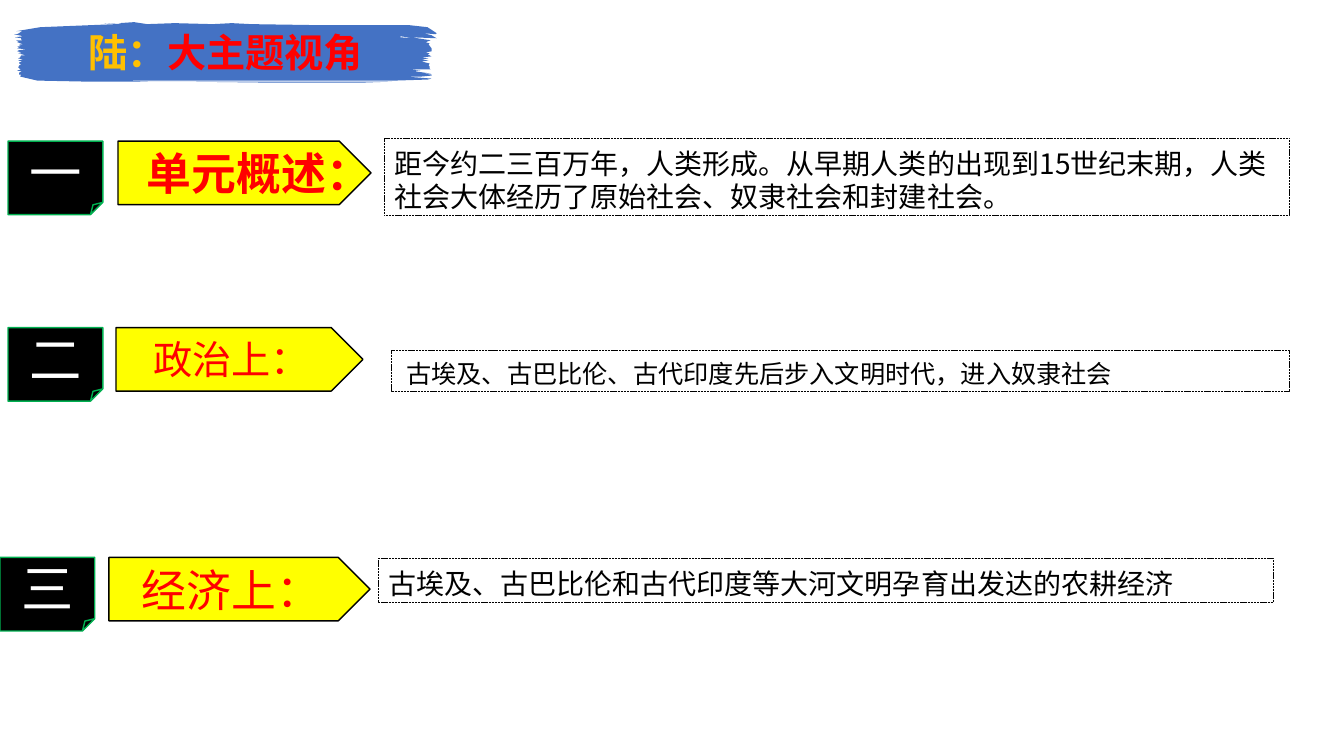
from lxml.etree import SubElement
from pptx import Presentation
from pptx.dml.color import RGBColor
from pptx.enum.dml import MSO_LINE
from pptx.enum.shapes import MSO_SHAPE
from pptx.enum.text import MSO_ANCHOR, MSO_AUTO_SIZE, PP_ALIGN
from pptx.oxml.ns import qn
from pptx.util import Pt

PX = 9144
FONT = "Noto Sans CJK SC"
BLACK = RGBColor(0x00, 0x00, 0x00)
WHITE = RGBColor(0xFF, 0xFF, 0xFF)
RED = RGBColor(0xFF, 0x00, 0x00)
GOLD = RGBColor(0xFF, 0xC0, 0x00)
YELLOW = RGBColor(0xFF, 0xFF, 0x00)
GREEN = RGBColor(0x00, 0xB0, 0x50)
BLUE = RGBColor(0x44, 0x72, 0xC4)

BRUSH = [
    (15, 37), (21, 38), (21, 39), (22, 40), (16, 40), (19, 42), (17, 42),
    (23, 44), (19, 44), (21, 45), (19, 45), (20, 46), (17, 46), (19, 47),
    (17, 48), (26, 49), (18, 50), (17, 51), (23, 52), (19, 52), (22, 53),
    (18, 53), (26, 55), (21, 55), (20, 57), (18, 58), (23, 59), (18, 60),
    (22, 61), (19, 62), (19, 63), (21, 64), (19, 65), (18, 67), (21, 68),
    (19, 68), (21, 69), (17, 70), (22, 71), (19, 72), (19, 74), (21, 74),
    (20, 76), (37, 80), (85, 81), (182, 81), (266, 82), (359, 82),
    (389, 81), (251, 81), (149, 81), (120, 80), (187, 80), (230, 80),
    (324, 80), (391, 80), (424, 79), (428, 78), (402, 76), (418, 76),
    (428, 75), (428, 74), (417, 73), (427, 73), (413, 71), (412, 70),
    (417, 70), (407, 69), (427, 69), (426, 68), (426, 66), (425, 65),
    (426, 63), (418, 61), (425, 60), (418, 59), (425, 58), (418, 57),
    (428, 56), (424, 54), (426, 53), (422, 52), (428, 51), (428, 48),
    (425, 44), (426, 43), (422, 42), (427, 40), (408, 37), (433, 38),
    (428, 35), (420, 33), (432, 34), (433, 33), (430, 31), (424, 27),
    (406, 25), (317, 25), (249, 24), (230, 23), (211, 24), (173, 23),
    (146, 24), (133, 22), (118, 23), (121, 24), (103, 23), (115, 24),
    (40, 27), (16, 31), (22, 31), (17, 34), (14, 34), (23, 36),
]
NICK = [(397, 37), (397, 36), (404, 37), (408, 38)]


def write(frame, runs, size, bold=False, align=PP_ALIGN.CENTER):
    """Fill the first paragraph with coloured runs and return it."""
    frame.word_wrap = True
    frame.auto_size = MSO_AUTO_SIZE.NONE
    frame.vertical_anchor = MSO_ANCHOR.MIDDLE
    para = frame.paragraphs[0]
    para.alignment = align
    for text, color in runs:
        run = para.add_run()
        run.text = text
        run.font.size = Pt(size)
        run.font.bold = bold
        run.font.name = FONT
        run.font.color.rgb = color
        SubElement(run._r.get_or_add_rPr(), qn("a:ea")).set("typeface", FONT)
    return para


def pad(frame, left, top, right, low):
    """Set the four insets of a text frame in px."""
    frame.margin_left, frame.margin_top = left * PX, top * PX
    frame.margin_right, frame.margin_bottom = right * PX, low * PX


def block(slide, kind, area, fill, edge, width=1):
    """Add a filled preset shape with an outline."""
    shape = slide.shapes.add_shape(kind, *(n * PX for n in area))
    shape.shadow.inherit = False
    shape.fill.solid()
    shape.fill.fore_color.rgb = fill
    shape.line.color.rgb = edge
    shape.line.width = Pt(width)
    return shape


def number(slide, area, text):
    """Add a black folded card with a numeral."""
    card = block(slide, MSO_SHAPE.FOLDED_CORNER, area, BLACK, GREEN)
    pad(card.text_frame, 0, 0, 0, 0)
    write(card.text_frame, [(text, WHITE)], 37.4)


def label(slide, area, text, size, bold):
    """Add a yellow arrow with a red label."""
    arrow = block(slide, MSO_SHAPE.PENTAGON, area, YELLOW, BLACK)
    write(arrow.text_frame, [(text, RED)], size, bold)


def note(slide, area, text, size, left, align):
    """Add a dashed box with body text."""
    box = block(slide, MSO_SHAPE.RECTANGLE, area, WHITE, BLACK, 0.5)
    box.line.dash_style = MSO_LINE.SQUARE_DOT
    para = write(box.text_frame, [(text, BLACK)], size, align=align)
    para.line_spacing = Pt(size * 1.2)
    box.text_frame.vertical_anchor = MSO_ANCHOR.TOP
    pad(box.text_frame, left, 8, 10, 0)


def banner(slide):
    """Draw the brush stroke and put the title on it."""
    pen = slide.shapes.build_freeform(*BRUSH[0], scale=PX)
    pen.add_line_segments(BRUSH[1:], close=True)
    pen.move_to(*NICK[0])
    pen.add_line_segments(NICK[1:], close=True)
    brush = pen.convert_to_shape()
    brush.shadow.inherit = False
    brush.fill.solid()
    brush.fill.fore_color.rgb = BLUE
    brush.line.fill.background()

    title = slide.shapes.title
    title.left, title.top = 14 * PX, 21 * PX
    title.width, title.height = 420 * PX, 61 * PX
    pad(title.text_frame, 0, 0, 0, 0)
    runs = [("陆：", GOLD), ("大主题视角", RED)]
    para = write(title.text_frame, runs, 28, True)
    para.line_spacing = 1.0
    para.space_before = Pt(0)
    slide.shapes._spTree.append(title._element)


def main():
    """Build the slide and save it."""
    deck = Presentation()
    deck.slide_width, deck.slide_height = 1333 * PX, 750 * PX
    slide = deck.slides.add_slide(deck.slide_layouts[5])
    banner(slide)

    cards = [("一", 8, 140), ("二", 8, 325), ("三", 0, 553)]
    for text, left, top in cards:
        number(slide, (left, top, 94, 73), text)

    labels = [
        ("单元概述：", (117, 140, 251, 63), 32, True),
        ("政治上：", (115, 325, 245, 63), 28, False),
        ("经济上：", (108, 553, 259, 63), 32, False),
    ]
    for text, area, size, bold in labels:
        label(slide, area, text, size, bold)

    notes = [
        ("距今约二三百万年，人类形成。从早期人类的出现到15世纪末期，"
         "人类社会大体经历了原始社会、奴隶社会和封建社会。",
         (381, 137, 898, 77), 20, 10, PP_ALIGN.LEFT),
        ("古埃及、古巴比伦、古代印度先后步入文明时代，进入奴隶社会",
         (388, 348, 891, 40), 18, 15, PP_ALIGN.JUSTIFY),
        ("古埃及、古巴比伦和古代印度等大河文明孕育出发达的农耕经济",
         (375, 554, 888, 44), 20, 10, PP_ALIGN.JUSTIFY),
    ]
    for text, area, size, left, align in notes:
        note(slide, area, text, size, left, align)
    deck.save("out.pptx")


if __name__ == "__main__":
    main()
